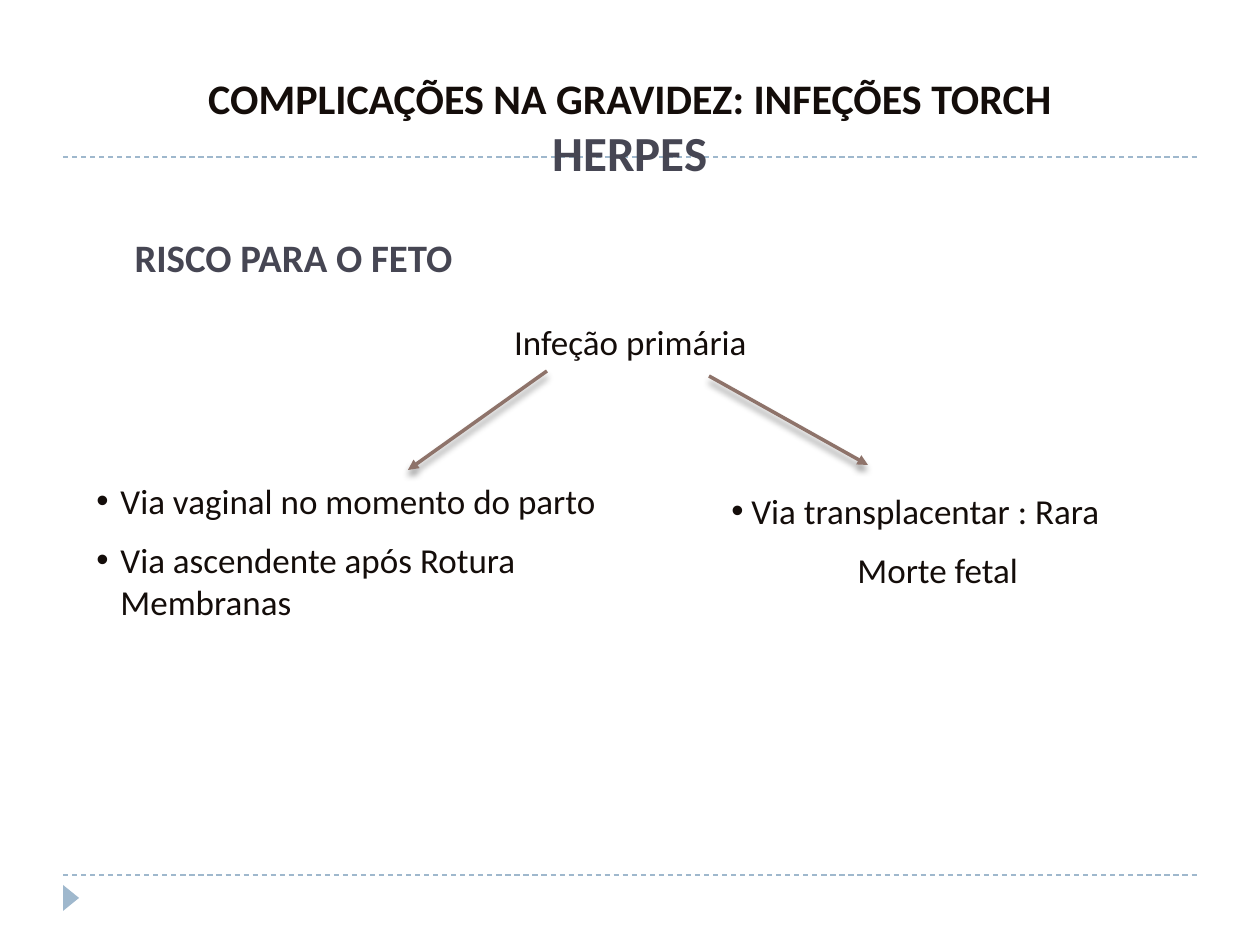
from dataclasses import dataclass

from lxml import etree
from pptx import Presentation
from pptx.dml.color import RGBColor
from pptx.enum.dml import MSO_LINE
from pptx.enum.shapes import MSO_CONNECTOR, MSO_SHAPE
from pptx.enum.text import MSO_ANCHOR, MSO_AUTO_SIZE, PP_ALIGN
from pptx.oxml.ns import qn
from pptx.util import Pt

PX = 914400 / 126
LEFT, CENTER = PP_ALIGN.LEFT, PP_ALIGN.CENTER
TRIANGLE, STRAIGHT = MSO_SHAPE.ISOSCELES_TRIANGLE, MSO_CONNECTOR.STRAIGHT
TOP, NO_FIT, DASH = MSO_ANCHOR.TOP, MSO_AUTO_SIZE.NONE, MSO_LINE.DASH


@dataclass(frozen=True)
class Theme:
    font: str = "Calibri"
    ink: str = "140D0A"
    heading: str = "464653"
    rule: str = "9FB8CD"
    arrow: str = "8E736A"
    title: float = 24
    topic: float = 28
    section: float = 22.2
    body: float = 20
    gap: float = 10


T = Theme()


def emu(*lengths):
    return [round(n * PX) for n in lengths]


def rgb(color):
    return RGBColor.from_string(color)


def add_child(parent, tag, **attrs):
    return etree.SubElement(parent, qn(tag), {k: str(v) for k, v in attrs.items()})


def write(tf, lines, size=T.body, color=T.ink, bold=False, align=LEFT, wrap=True):
    """Each line is its text and a dict of paragraph or font changes."""
    frame = {"word_wrap": wrap, "auto_size": NO_FIT, "vertical_anchor": TOP}
    for name, value in frame.items():
        setattr(tf, name, value)
    for i, (text, changes) in enumerate(lines):
        p = tf.paragraphs[0] if i == 0 else tf.add_paragraph()
        p.alignment = align
        p.space_before = Pt(T.gap if i else 0)
        if "before" in changes:
            p.space_before = Pt(changes["before"])
        r = p.add_run()
        r.text = text
        font = {"name": T.font, "size": Pt(changes.get("size", size)), "bold": bold}
        for name, value in font.items():
            setattr(r.font, name, value)
        r.font.color.rgb = rgb(changes.get("color", color))
        # Bullet and indents
        margin, bullet = changes.get("margin", 0), changes.get("bullet", False)
        pPr = p._p.get_or_add_pPr()
        pPr.set("marL", str(emu(margin)[0]))
        pPr.set("indent", str(emu(-margin)[0] if bullet else 0))
        if bullet:
            add_child(pPr, "a:buFont", typeface="Arial")
            add_child(pPr, "a:buChar", char="•")
        else:
            add_child(pPr, "a:buNone")


def place(sp, box):
    for name, value in zip(("left", "top", "width", "height"), emu(*box)):
        setattr(sp, name, value)
    # Placeholders stand in front of the decoration
    sp.element.getparent().append(sp.element)


def add_line(s, start, end, color, width, shadow=False):
    line = s.shapes.add_connector(STRAIGHT, *emu(*start, *end))
    line.line.color.rgb = rgb(color)
    line.line.width = Pt(width)
    effects = add_child(line.element.spPr, "a:effectLst")
    if shadow:
        outer = add_child(effects, "a:outerShdw", blurRad=Pt(4), dist=Pt(3.4),
                          dir=90 * 60000, rotWithShape=0)
        add_child(add_child(outer, "a:srgbClr", val="000000"), "a:alpha", val=40000)
    return line


def decoration(s, box):
    """Dashed rules above and below the content, with a corner marker."""
    x, y, w, h = box
    for rule_y in (y + h, y):
        add_line(s, (x, rule_y), (x + w, rule_y), T.rule, 0.75).line.dash_style = DASH
    marker = s.shapes.add_shape(TRIANGLE, *emu(x - 5, y + h + 15, 26, 16))
    marker.rotation = 90
    marker.shadow.inherit = False
    marker.fill.solid()
    marker.fill.fore_color.rgb = rgb(T.rule)
    marker.line.fill.background()


def headings(s, box):
    """Two-line title and the section heading below it."""
    x, y, w, h = box
    title, section = s.placeholders
    place(title, (x, y, w, 124))
    write(title.text_frame, [
        ("COMPLICAÇÕES NA GRAVIDEZ: INFEÇÕES TORCH", {}),
        ("HERPES", {"size": T.topic, "color": T.heading, "before": 0}),
    ], size=T.title, bold=True, align=CENTER)
    place(section, (x + 58, y + h - 56, 485, 58))
    write(section.text_frame, [("RISCO PARA O FETO", {})],
          size=T.section, color=T.heading, bold=True)


def text_box(s, box, lines, **style):
    write(s.shapes.add_textbox(*emu(*box)).text_frame, lines, **style)


def routes(s, box):
    """Primary infection, branching into two transmission routes."""
    x, y, w, h = box
    text_box(s, (x + 416, y, 261, 55), [("Infeção primária", {})],
             align=CENTER, wrap=False)
    text_box(s, (x, y + 159, 546, 161), [
        ("Via vaginal no momento do parto", {"bullet": True, "margin": 24}),
        ("Via ascendente após Rotura Membranas", {"bullet": True, "margin": 24}),
    ])
    text_box(s, (x + 635, y + 169, w - 635, 118), [
        ("Via transplacentar : Rara", {"bullet": True, "margin": 20}),
        ("Morte fetal", {"margin": 126}),
    ])
    # Branch arrows
    for start, end in (((463, 57), (324, 156)), ((625, 62), (784, 151))):
        arrow = add_line(s, (x + start[0], y + start[1]), (x + end[0], y + end[1]),
                         T.arrow, 2, shadow=True)
        add_child(arrow.line._get_or_add_ln(), "a:tailEnd", type="triangle")


def main():
    prs = Presentation()
    prs.slide_width, prs.slide_height = emu(1260, 945)
    s = prs.slides.add_slide(prs.slide_layouts[1])
    decoration(s, (63, 157, 1134, 718))
    headings(s, (64, 66, 1132, 217))
    routes(s, (84, 314, 1112, 320))
    prs.save("out.pptx")


if __name__ == "__main__":
    main()
